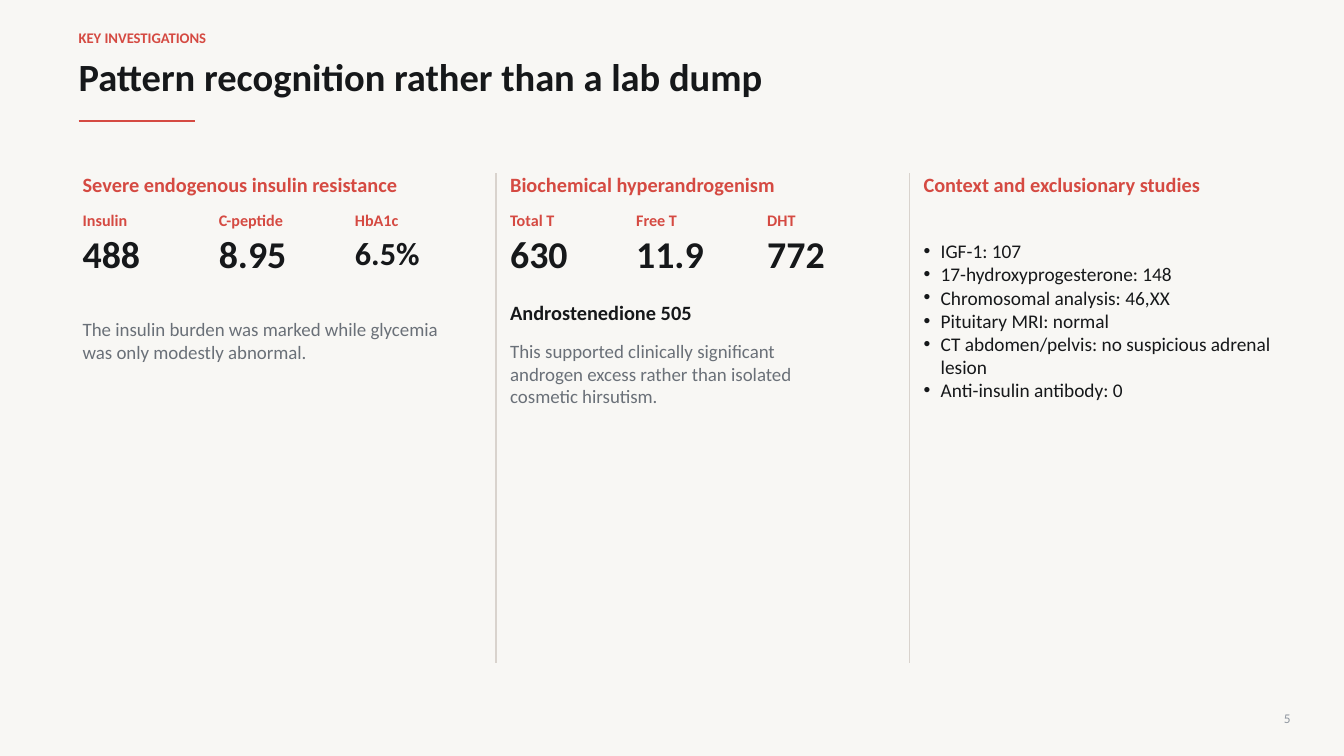
from lxml import etree
from pptx import Presentation
from pptx.dml.color import RGBColor
from pptx.enum.shapes import MSO_CONNECTOR
from pptx.enum.text import MSO_ANCHOR, MSO_AUTO_SIZE, PP_ALIGN
from pptx.oxml.ns import qn
from pptx.util import Inches, Pt

STRAIGHT = MSO_CONNECTOR.STRAIGHT
MIDDLE = MSO_ANCHOR.MIDDLE
NO_FIT = MSO_AUTO_SIZE.NONE
LEFT, RIGHT = PP_ALIGN.LEFT, PP_ALIGN.RIGHT

FONT = "Calibri"
PAPER, INK, RED, GREY = "F8F7F4", "16181A", "D54A42", "6A7078"
RULE, FAINT = "D9D3CD", "8F969F"

COLUMN_TOP, COLUMN_BOTTOM = 1.72, 6.58


def color(value):
    return RGBColor.from_string(value)


def fill_text(sp, box, text, size, ink, bold=False, align=LEFT):
    """Place a text shape in box and write one paragraph per line of text."""
    sp.left, sp.top, sp.width, sp.height = (Inches(v) for v in box)
    tf = sp.text_frame
    tf.text = text
    tf.word_wrap = True
    tf.auto_size = NO_FIT
    tf.vertical_anchor = MIDDLE
    tf.margin_left = tf.margin_right = tf.margin_top = tf.margin_bottom = 0
    for p in tf.paragraphs:
        p.alignment = align
        p.space_before = Pt(0)
        for r in p.runs:
            r.font.name = FONT
            r.font.size = Pt(size)
            r.font.bold = bold
            r.font.color.rgb = color(ink)


def add_text(s, box, *style, **options):
    sp = s.shapes.add_textbox(0, 0, 0, 0)
    fill_text(sp, box, *style, **options)


def add_line(s, x1, y1, x2, y2, ink, width):
    line = s.shapes.add_connector(
        STRAIGHT, Inches(x1), Inches(y1), Inches(x2), Inches(y2))
    line.line.color.rgb = color(ink)
    line.line.width = Pt(width)
    etree.SubElement(line._element.spPr, qn("a:effectLst"))


def add_bullets(sp):
    for p in sp.text_frame.paragraphs:
        pPr = p._p.get_or_add_pPr()
        pPr.set("marL", str(Inches(0.17)))
        pPr.set("indent", str(-Inches(0.17)))
        etree.SubElement(pPr, qn("a:buChar")).set("char", "•")


def add_header(s, x, y, kicker, title):
    add_text(s, (x, y, 3.2, 0.18), kicker, 10.5, RED, bold=True)
    fill_text(s.shapes.title, (x, y + 0.24, 8.6, 0.48), title, 27.5, INK,
              bold=True)
    add_line(s, x, y + 0.92, x + 1.15, y + 0.92, RED, 1.6)


def add_heading(s, x, width, text):
    add_text(s, (x, COLUMN_TOP, width, 0.22), text, 14.5, RED, bold=True)


def add_metrics(s, x, metrics):
    """Lay out (label, value, width, value size) metrics from left to right."""
    for label, value, width, size in metrics:
        add_text(s, (x, COLUMN_TOP + 0.38, width, 0.16), label, 11.5, RED,
                 bold=True)
        add_text(s, (x, COLUMN_TOP + 0.62, width, 0.34), value, size, INK,
                 bold=True)
        x += width + (0.1 if width == 1.2 else 0.15 if width == 1.1 else 0.2)


def add_insulin_column(s, x):
    add_heading(s, x, 3.7, "Severe endogenous insulin resistance")
    add_metrics(s, x, [("Insulin", "488", 1.15, 27),
                       ("C-peptide", "8.95", 1.15, 27),
                       ("HbA1c", "6.5%", 1, 23)])
    add_text(s, (x, COLUMN_TOP + 1.33, 3.6, 0.65),
             "The insulin burden was marked while glycemia was only "
             "modestly abnormal.", 13.5, GREY)


def add_androgen_column(s, x):
    add_heading(s, x, 3.5, "Biochemical hyperandrogenism")
    add_metrics(s, x, [("Total T", "630", 1.1, 27),
                       ("Free T", "11.9", 1.2, 27),
                       ("DHT", "772", 0.9, 27)])
    add_text(s, (x, COLUMN_TOP + 1.28, 2, 0.2), "Androstenedione 505", 14.5,
             INK, bold=True)
    add_text(s, (x, COLUMN_TOP + 1.66, 3.35, 0.65),
             "This supported clinically significant androgen excess rather "
             "than isolated cosmetic hirsutism.", 13.5, GREY)


def add_context_column(s, x):
    add_heading(s, x, 3.35, "Context and exclusionary studies")
    studies = ["IGF-1: 107", "17-hydroxyprogesterone: 148",
               "Chromosomal analysis: 46,XX", "Pituitary MRI: normal",
               "CT abdomen/pelvis: no suspicious adrenal lesion",
               "Anti-insulin antibody: 0"]
    body = s.placeholders[1]
    fill_text(body, (x, COLUMN_TOP + 0.36, 3.45, 2.2), "\n".join(studies),
              13.8, INK)
    add_bullets(body)


def main():
    prs = Presentation()
    prs.slide_width, prs.slide_height = Inches(13.33), Inches(7.5)
    s = prs.slides.add_slide(prs.slide_layouts[1])
    s.background.fill.solid()
    s.background.fill.fore_color.rgb = color(PAPER)

    add_header(s, 0.78, 0.28, "KEY INVESTIGATIONS",
               "Pattern recognition rather than a lab dump")
    for x in (4.92, 9.02):
        add_line(s, x, COLUMN_TOP, x, COLUMN_BOTTOM, RULE, 1)
    add_insulin_column(s, 0.82)
    add_androgen_column(s, 5.06)
    add_context_column(s, 9.16)
    add_text(s, (12.45, 7.03, 0.35, 0.18), "5", 9.5, FAINT, align=RIGHT)
    prs.save("out.pptx")


if __name__ == "__main__":
    main()
